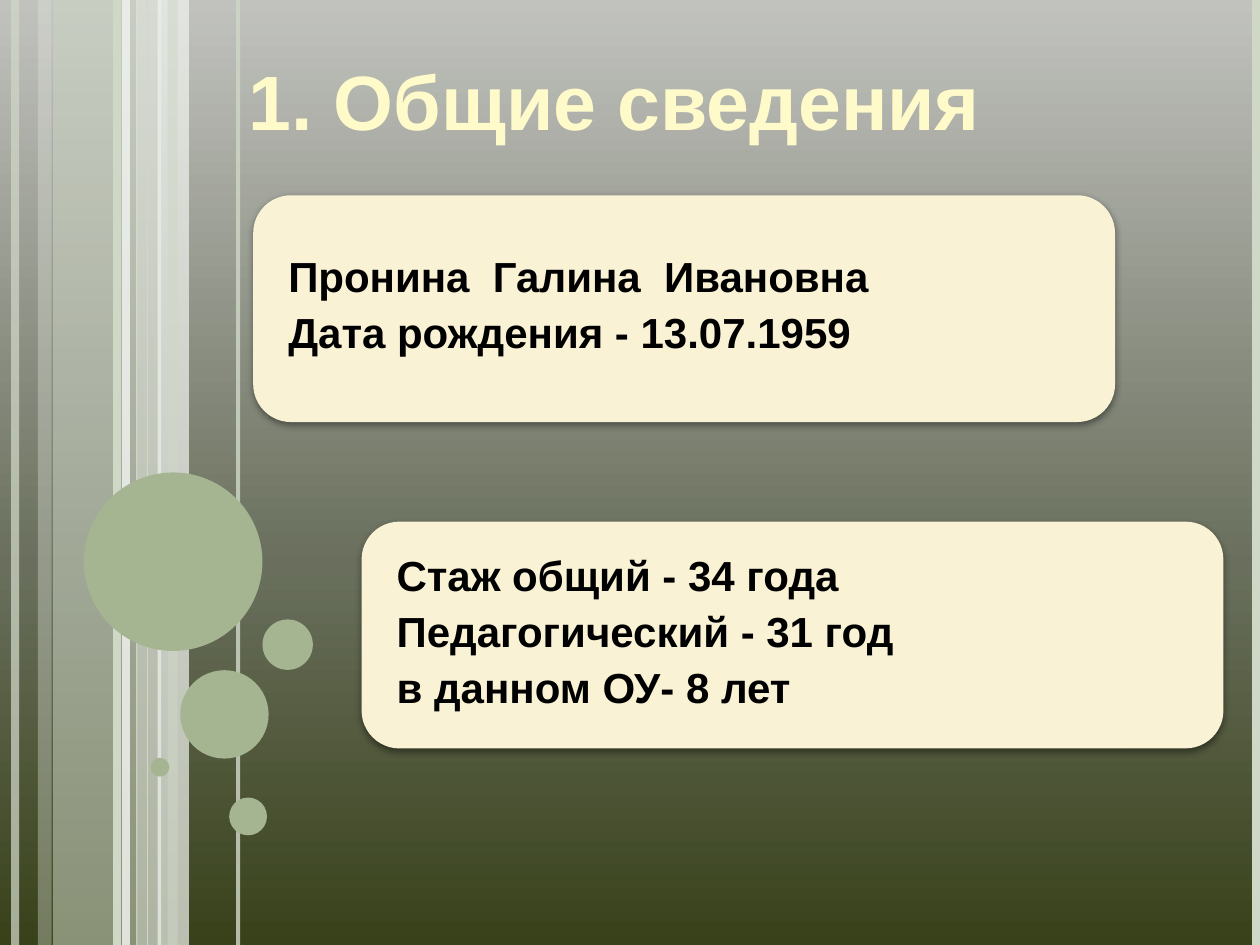
from copy import deepcopy

from pptx import Presentation
from pptx.dml.color import RGBColor
from pptx.enum import shapes, text
from pptx.oxml import ns, xmlchemy
from pptx.util import Pt

WIDTH, HEIGHT = 720, 540
FONT = "Arial"
SAGE = RGBColor(0xCF, 0xD7, 0xC7)
MIST = RGBColor(0xE1, 0xE5, 0xDC)
FROST = RGBColor(0xF0, 0xF3, 0xEE)
GREEN = RGBColor(0xA5, 0xB5, 0x92)
CREAM = RGBColor(0xFA, 0xF2, 0xD4)
LEMON = RGBColor(0xFE, 0xFA, 0xC9)
BLACK = RGBColor(0, 0, 0)
BACKGROUND = [(0, RGBColor(0x38, 0x41, 0x1A)), (0.4, RGBColor(0x69, 0x6F, 0x5C)),
              (1, RGBColor(0xC1, 0xC2, 0xBE))]

# left, width, colour, opacity in percent
BANDS = [(30.24, 48.24, SAGE, 54), (21.6, 7.92, MIST, 36),
         (77.76, 14.4, MIST, 70), (90, 18, FROST, 71)]
NARROW_BAND = (95.76, 5.76, SAGE, 51)
# x, line width, colour, opacity in percent
STRIPES = [(8.64, 4.5, SAGE, 73), (72, 4.5, FROST, 83), (66.96, 4.5, SAGE, 100),
           (136.08, 2.25, SAGE, 82), (84.24, 0.75, SAGE, 100), (717.84, 4.5, SAGE, 100)]
# left, top, diameter
BUBBLES = [(48, 270, 102), (103, 383, 50.5), (86, 433, 10.8),
           (131, 455.76, 21.6), (150, 354, 28.8)]
# left, top, lines of text, extra width of the word gaps in each line
CARDS = [(144.72, 111.6, [("Пронина Галина Ивановна", 6.67),
                          ("Дата рождения - 13.07.1959", 0)]),
         (206.64, 298.08, [("Стаж общий - 34 года", 0),
                           ("Педагогический - 31 год", 0),
                           ("в данном ОУ- 8 лет", 0)])]


def set_opacity(fill, percent):
    color = next(fill.iter(ns.qn("a:srgbClr")))
    xmlchemy.OxmlElement  # element factory shared with add_shadow
    alpha = color.makeelement(ns.qn("a:alpha"), {"val": str(percent * 1000)})
    color.append(alpha)


def add_shadow(properties, opacity, blur, distance, angle):
    """Give shape or run properties a black outer shadow."""
    effects = properties.find(ns.qn("a:effectLst"))
    if effects is None:
        effects = properties.makeelement(ns.qn("a:effectLst"), {})
        properties.find(ns.qn("a:solidFill")).addnext(effects)
    shadow = effects.makeelement(ns.qn("a:outerShdw"), {
        "blurRad": str(Pt(blur)), "dist": str(Pt(distance)),
        "dir": str(angle * 60000), "algn": "tl", "rotWithShape": "0"})
    color = shadow.makeelement(ns.qn("a:srgbClr"), {"val": "000000"})
    shadow.append(color)
    effects.append(shadow)
    set_opacity(shadow, opacity)


def add_span(para, words, size, color, spacing=0):
    span = para.add_run()
    span.text = words
    font = span.font
    font.name, font.size, font.bold = FONT, Pt(size), True
    font.color.rgb = color
    if spacing:
        font._element.set("spc", str(round(spacing * 100)))
    return span


def write_text(para, words, size, color, word_gap=0, **layout):
    """Fill a paragraph; word_gap widens its spaces, layout sets its attributes."""
    for name, value in layout.items():
        setattr(para, name, value)
    if not word_gap:
        return add_span(para, words, size, color)
    for index, word in enumerate(words.split()):
        if index:
            add_span(para, " ", size, color, word_gap)
        add_span(para, word, size, color)


def add_figure(slide, kind, left, top, width, height, color, opacity=100):
    figure = slide.shapes.add_shape(kind, Pt(left), Pt(top), Pt(width), Pt(height))
    figure.shadow.inherit = False
    figure.fill.solid()
    figure.fill.fore_color.rgb = color
    figure.line.fill.background()
    if opacity < 100:
        set_opacity(figure.element.spPr, opacity)
    return figure


def add_band(slide, left, width, color, opacity):
    add_figure(slide, shapes.MSO_SHAPE.RECTANGLE, left, 0, width, HEIGHT, color, opacity)


def add_stripe(slide, x, width, color, opacity):
    stripe = slide.shapes.add_connector(
        shapes.MSO_CONNECTOR.STRAIGHT, Pt(x), 0, Pt(x), Pt(HEIGHT))
    stripe.line.width = Pt(width)
    stripe.line.color.rgb = color
    properties = stripe.element.spPr
    if opacity < 100:
        set_opacity(properties, opacity)
    properties.append(properties.makeelement(ns.qn("a:effectLst"), {}))


def paint_background(slide):
    fill = slide.background.fill
    fill.gradient()
    fill.gradient_angle = 90
    stop_list = next(slide.element.iter(ns.qn("a:gsLst")))
    stop_list.append(deepcopy(stop_list[0]))
    for stop, (position, color) in zip(fill.gradient_stops, BACKGROUND):
        stop.position = position
        stop.color.rgb = color


def place_title(slide, words):
    title = slide.shapes.title
    title.left, title.top, title.width, title.height = Pt(118), Pt(22.32), Pt(466.56), Pt(113.76)
    title.element.getparent().append(title.element)  # in front of the stripes
    frame = title.text_frame
    frame.vertical_anchor = text.MSO_ANCHOR.TOP
    frame.margin_top = Pt(8)
    span = write_text(frame.paragraphs[0], words, 44, LEMON, alignment=text.PP_ALIGN.CENTER)
    add_shadow(span.font._element, 60, 4, 3, 45)


def add_card(slide, left, top, lines):
    width, height, edge = 492.48, 129.6, 6.3
    card = add_figure(slide, shapes.MSO_SHAPE.ROUNDED_RECTANGLE, left, top, width, height, CREAM)
    add_shadow(card.element.spPr, 42, 4, 1.6, 90)
    box = slide.shapes.add_textbox(Pt(left + edge), Pt(top + edge),
                                   Pt(width - 2 * edge), Pt(height - 2 * edge))
    frame = box.text_frame
    frame.word_wrap = True
    frame.vertical_anchor = text.MSO_ANCHOR.MIDDLE
    frame.margin_left = frame.margin_right = Pt(13.68)
    frame.margin_top = frame.margin_bottom = 0
    for index, (words, word_gap) in enumerate(lines):
        para = frame.add_paragraph() if index else frame.paragraphs[0]
        write_text(para, words, 24, BLACK, word_gap, line_spacing=0.8, space_after=Pt(9))


def main():
    deck = Presentation()
    deck.slide_width, deck.slide_height = Pt(WIDTH), Pt(HEIGHT)
    slide = deck.slides.add_slide(deck.slide_layouts[5])
    paint_background(slide)
    for band in BANDS:
        add_band(slide, *band)
    for stripe in STRIPES:
        add_stripe(slide, *stripe)
    add_band(slide, *NARROW_BAND)
    for left, top, size in BUBBLES:
        add_figure(slide, shapes.MSO_SHAPE.OVAL, left, top, size, size, GREEN)
    place_title(slide, "1. Общие сведения")
    for card in CARDS:
        add_card(slide, *card)
    deck.save("out.pptx")


if __name__ == "__main__":
    main()
